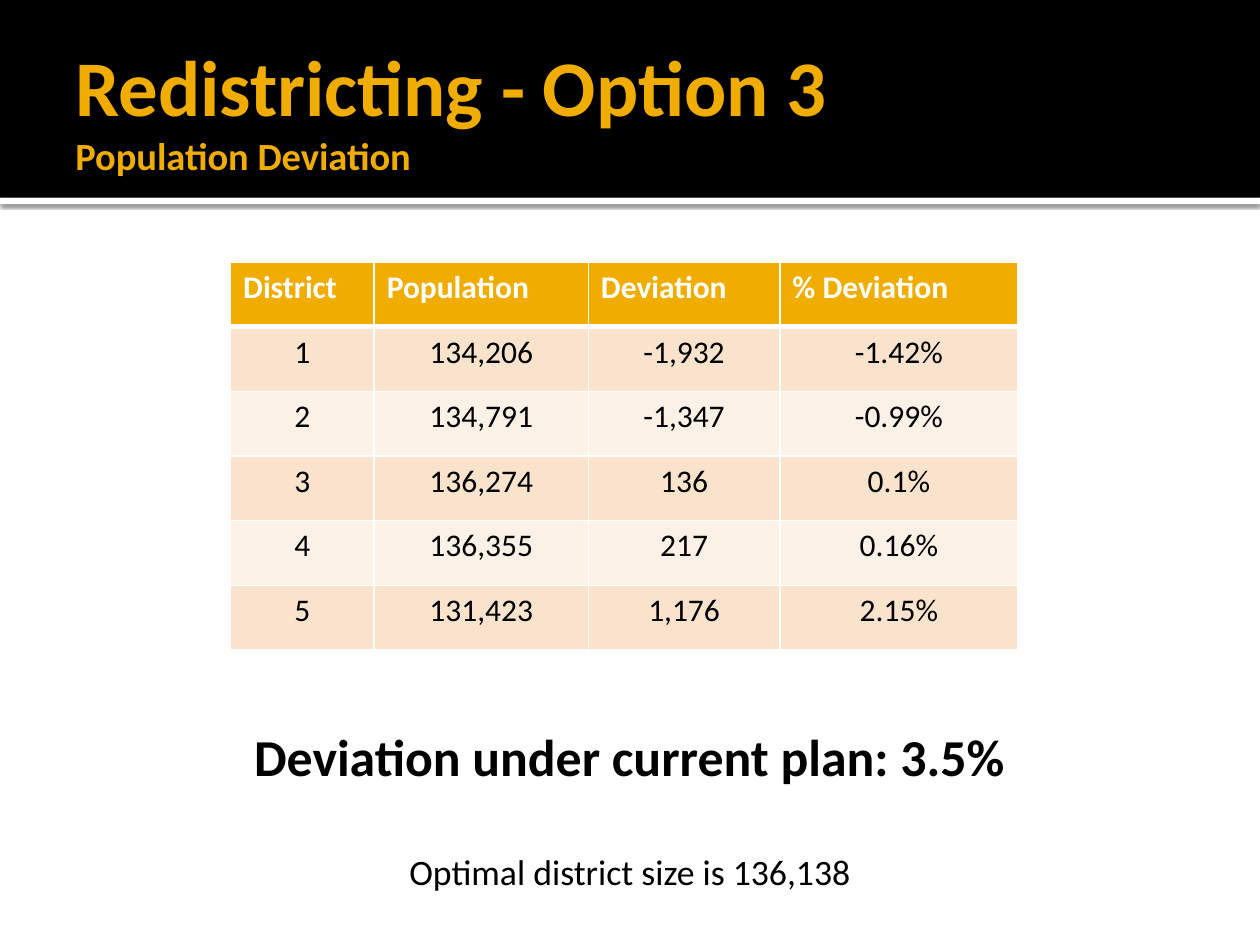
from pptx import Presentation, util as u
from pptx.dml.color import RGBColor
from pptx.enum import shapes, text
from pptx.oxml import parse_xml
from pptx.oxml.ns import nsdecls

TITLE = "Redistricting - Option 3"
SUBTITLE = "Population Deviation"
NOTES = ["Deviation under current plan: 3.5%", "Optimal district size is 136,138"]
ROWS = [
    ("District", "Population", "Deviation", "% Deviation"),
    ("1", "134,206", "-1,932", "-1.42%"),
    ("2", "134,791", "-1,347", "-0.99%"),
    ("3", "136,274", "136", "0.1%"),
    ("4", "136,355", "217", "0.16%"),
    ("5", "131,423", "1,176", "2.15%"),
]
COL_WIDTHS = [1.14, 1.7, 1.52, 1.89]
TABLE_HEIGHT = 3.08
COLORS = {"gold": "F0AD00", "black": "000000", "white": "FFFFFF",
          "band_dark": "F9E3CC", "band_light": "FCF1E7"}
LEFT, CENTER = text.PP_ALIGN.LEFT, text.PP_ALIGN.CENTER


def rgb(name):
    return RGBColor.from_string(COLORS[name])


def write(p, content, size=18, color="black", bold=False, align=LEFT, before=0):
    p.alignment = align
    p.space_before = u.Pt(before)
    r = p.add_run()
    r.text = content
    r.font.name = "Calibri"
    r.font.size = u.Pt(size)
    r.font.bold = bold
    r.font.color.rgb = rgb(color)


def add_bar(s, top, height, color):
    sp = s.shapes.add_shape(shapes.MSO_SHAPE.RECTANGLE, 0, u.Inches(top),
                            u.Inches(10), u.Inches(height))
    sp.fill.solid()
    sp.fill.fore_color.rgb = rgb(color)
    sp.line.fill.background()
    sp.shadow.inherit = False
    return sp


def add_box(s, top, height, anchor):
    tf = s.shapes.add_textbox(u.Inches(0.5), u.Inches(top),
                              u.Inches(9), u.Inches(height)).text_frame
    tf.word_wrap = True
    tf.vertical_anchor = anchor
    return tf


def add_shadow(sp):
    effects = sp._element.spPr.find("{*}effectLst")
    effects.append(parse_xml(
        f'<a:outerShdw {nsdecls("a")} blurRad="{u.Pt(2.5)}" dist="{u.Pt(0.8)}" '
        f'dir="5400000" rotWithShape="0"><a:srgbClr val="{COLORS["black"]}">'
        '<a:alpha val="60000"/></a:srgbClr></a:outerShdw>'))


def set_borders(cell, widths):
    for side, width in widths.items():
        cell._tc.get_or_add_tcPr().append(parse_xml(
            f'<a:ln{side} {nsdecls("a")} w="{u.Pt(width)}"><a:solidFill>'
            f'<a:srgbClr val="{COLORS["white"]}"/></a:solidFill></a:ln{side}>'))


def add_population_table(s):
    table = s.shapes.add_table(len(ROWS), len(COL_WIDTHS), u.Inches(1.83), u.Inches(2.08),
                               u.Inches(sum(COL_WIDTHS)), u.Inches(TABLE_HEIGHT)).table
    for column, width in zip(table.columns, COL_WIDTHS):
        column.width = u.Inches(width)
    for i, values in enumerate(ROWS):
        table.rows[i].height = u.Inches(TABLE_HEIGHT / len(ROWS))
        header = i == 0
        fill = "gold" if header else "band_dark" if i % 2 else "band_light"
        for j, value in enumerate(values):
            cell = table.cell(i, j)
            set_borders(cell, {"L": 1, "R": 1, "T": 3 if i == 1 else 1,
                               "B": 3 if header else 1})
            cell.fill.solid()
            cell.fill.fore_color.rgb = rgb(fill)
            write(cell.text_frame.paragraphs[0], value, bold=header,
                  color="white" if header else "black",
                  align=LEFT if header else CENTER)


def main():
    prs = Presentation()
    prs.slide_width, prs.slide_height = u.Inches(10), u.Inches(7.5)
    s = prs.slides.add_slide(prs.slide_layouts[6])

    add_shadow(add_bar(s, 1.57, 0.05, "white"))
    add_bar(s, 0, 1.57, "black")

    tf = add_box(s, 0.17, 1.37, text.MSO_ANCHOR.MIDDLE)
    write(tf.paragraphs[0], TITLE, size=45, color="gold", bold=True)
    write(tf.add_paragraph(), SUBTITLE, size=22, color="gold", bold=True)

    tf = add_box(s, 5.7, 1.4, text.MSO_ANCHOR.TOP)
    write(tf.paragraphs[0], NOTES[0], size=29.6, bold=True, align=CENTER)
    write(tf.add_paragraph(), NOTES[1], size=20.4, align=CENTER, before=36)

    add_population_table(s)
    prs.save("out.pptx")


if __name__ == "__main__":
    main()
